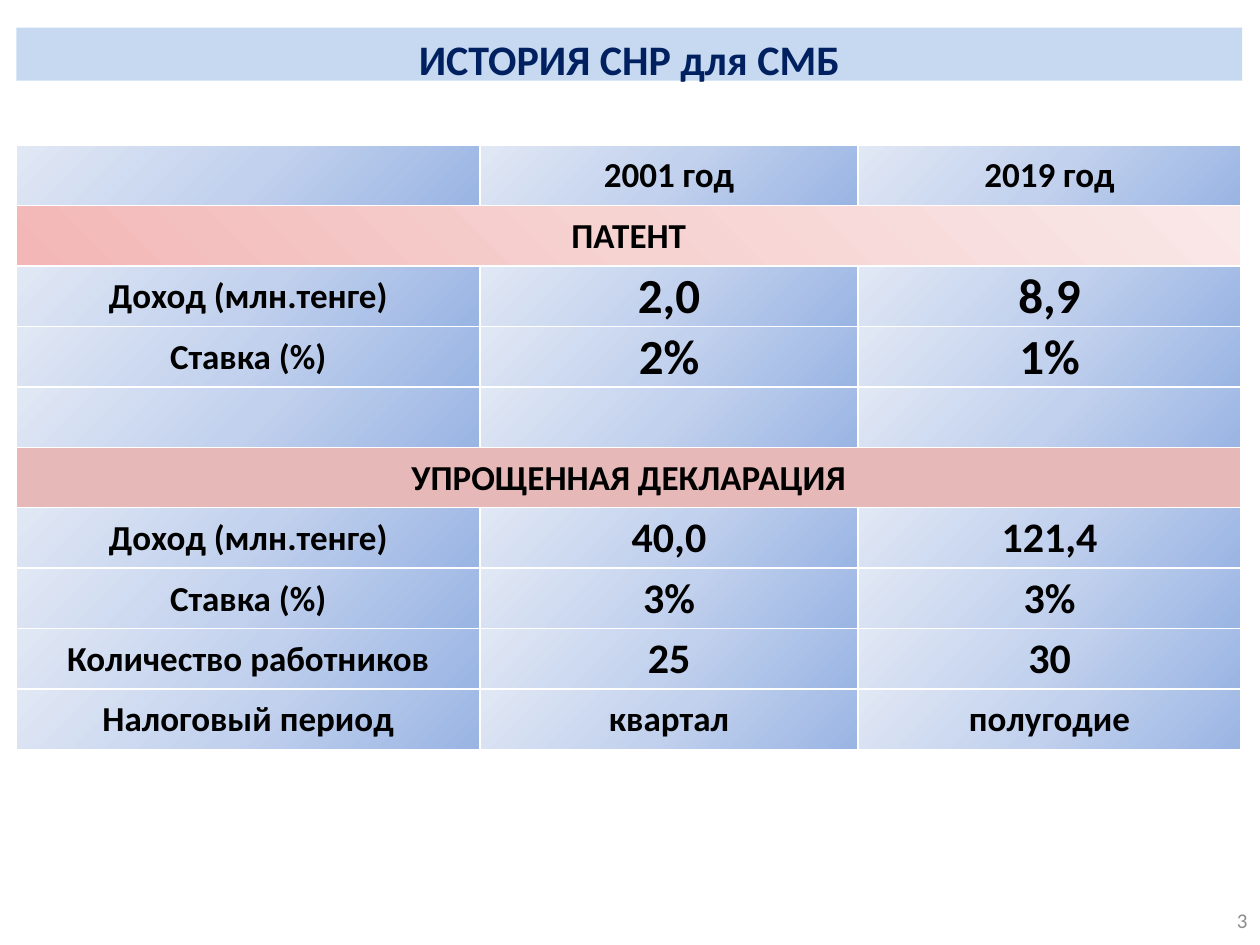
from pptx import Presentation
from pptx.dml.color import RGBColor
from pptx.enum.shapes import MSO_SHAPE
from pptx.enum.text import MSO_ANCHOR, PP_ALIGN
from pptx.oxml import parse_xml
from pptx.oxml.ns import nsdecls
from pptx.util import Inches, Pt

# Content: cell texts and the size of the figures in each row
TITLE = "ИСТОРИЯ СНР для СМБ"
PAGE = "3"
ROWS = [
    (["", "2001 год", "2019 год"], 20),
    (["ПАТЕНТ"], 20),
    (["Доход (млн.тенге)", "2,0", "8,9"], 28),
    (["Ставка (%)", "2%", "1%"], 28),
    (["", "", ""], 20),
    (["УПРОЩЕННАЯ ДЕКЛАРАЦИЯ"], 20),
    (["Доход (млн.тенге)", "40,0", "121,4"], 24),
    (["Ставка (%)", "3%", "3%"], 24),
    (["Количество работников", "25", "30"], 24),
    (["Налоговый период", "квартал", "полугодие"], 20),
]
COLORS = {"bar": "C6D9F1", "title": "002060", "text": "000000",
          "page": "8C8C8C", "line": "FFFFFF", "band": "E6B9B8"}
BLUE = ["9AB5E4", "C2D1ED", "E1E8F5"]
ROSE = ["F2B7B6", "F6D2D1", "FAE8E8"]
FONT = "Calibri"

# Grid
WIDE, HIGH = 10, 7.5
LEFT, SPAN = 0.13, 9.73
COLS = [3.68, 3, 3.04]
STEP = 0.48

SLANT = '<a:lin ang="13500000" scaled="0"/>'
ROUND = ('<a:path path="circle"><a:fillToRect l="0" t="100000" '
         'r="100000" b="0"/></a:path>')


def write(frame, text, size, color, align, bold=False):
    frame.text = text
    par = frame.paragraphs[0]
    par.alignment = align
    for run in par.runs:
        font = run.font
        font.name, font.size, font.bold = FONT, Pt(size), bold
        font.color.rgb = RGBColor.from_string(COLORS[color])


def blend(stops, shade):
    marks = "".join(
        f'<a:gs pos="{i * 50000}"><a:srgbClr val="{tone}"/></a:gs>'
        for i, tone in enumerate(stops))
    return parse_xml(f'<a:gradFill {nsdecls("a")} rotWithShape="1">'
                     f'<a:gsLst>{marks}</a:gsLst>{shade}</a:gradFill>')


def edge(props):
    for side in "LRTB":
        props.append(parse_xml(
            f'<a:ln{side} {nsdecls("a")} w="12700"><a:solidFill>'
            f'<a:srgbClr val="{COLORS["line"]}"/></a:solidFill></a:ln{side}>'))


def paint(cell, row):
    props = cell._tc.get_or_add_tcPr()
    edge(props)
    if len(ROWS[row][0]) > 1:
        props.append(blend(BLUE, SLANT))
    elif row == 1:
        props.append(blend(ROSE, ROUND))
    else:
        cell.fill.solid()
        cell.fill.fore_color.rgb = RGBColor.from_string(COLORS["band"])


deck = Presentation()
deck.slide_width, deck.slide_height = Inches(WIDE), Inches(HIGH)
slide = deck.slides.add_slide(deck.slide_layouts[6])

# Title bar
bar = slide.shapes.add_shape(MSO_SHAPE.RECTANGLE, Inches(LEFT), Inches(0.22),
                             Inches(SPAN), Inches(0.42))
bar.shadow.inherit = False
bar.fill.solid()
bar.fill.fore_color.rgb = RGBColor.from_string(COLORS["bar"])
bar.line.fill.background()
bar.text_frame.vertical_anchor = MSO_ANCHOR.TOP
write(bar.text_frame, TITLE, 24, "title", PP_ALIGN.CENTER, True)

# Page number
box = slide.shapes.add_textbox(Inches(7.67), Inches(7.1),
                               Inches(WIDE - 7.67), Inches(0.4))
box.text_frame.word_wrap = True
box.text_frame.vertical_anchor = MSO_ANCHOR.MIDDLE
write(box.text_frame, PAGE, 12, "page", PP_ALIGN.RIGHT)

# Table
table = slide.shapes.add_table(len(ROWS), len(COLS), Inches(LEFT), Inches(1.15),
                               Inches(SPAN), Inches(STEP * len(ROWS))).table
table.first_row = table.horz_banding = False
for col, width in zip(table.columns, COLS):
    col.width = Inches(width)
for r, (texts, size) in enumerate(ROWS):
    table.rows[r].height = Inches(STEP)
    if len(texts) == 1:
        table.cell(r, 0).merge(table.cell(r, len(COLS) - 1))
    for c in range(len(COLS)):
        cell = table.cell(r, c)
        paint(cell, r)
        if c < len(texts) and texts[c]:
            cell.vertical_anchor = MSO_ANCHOR.MIDDLE
            cell.margin_left = cell.margin_right = cell.margin_top = Inches(0.01)
            cell.margin_bottom = 0
            write(cell.text_frame, texts[c], size if c else 20, "text",
                  PP_ALIGN.CENTER, True)

deck.save("out.pptx")
